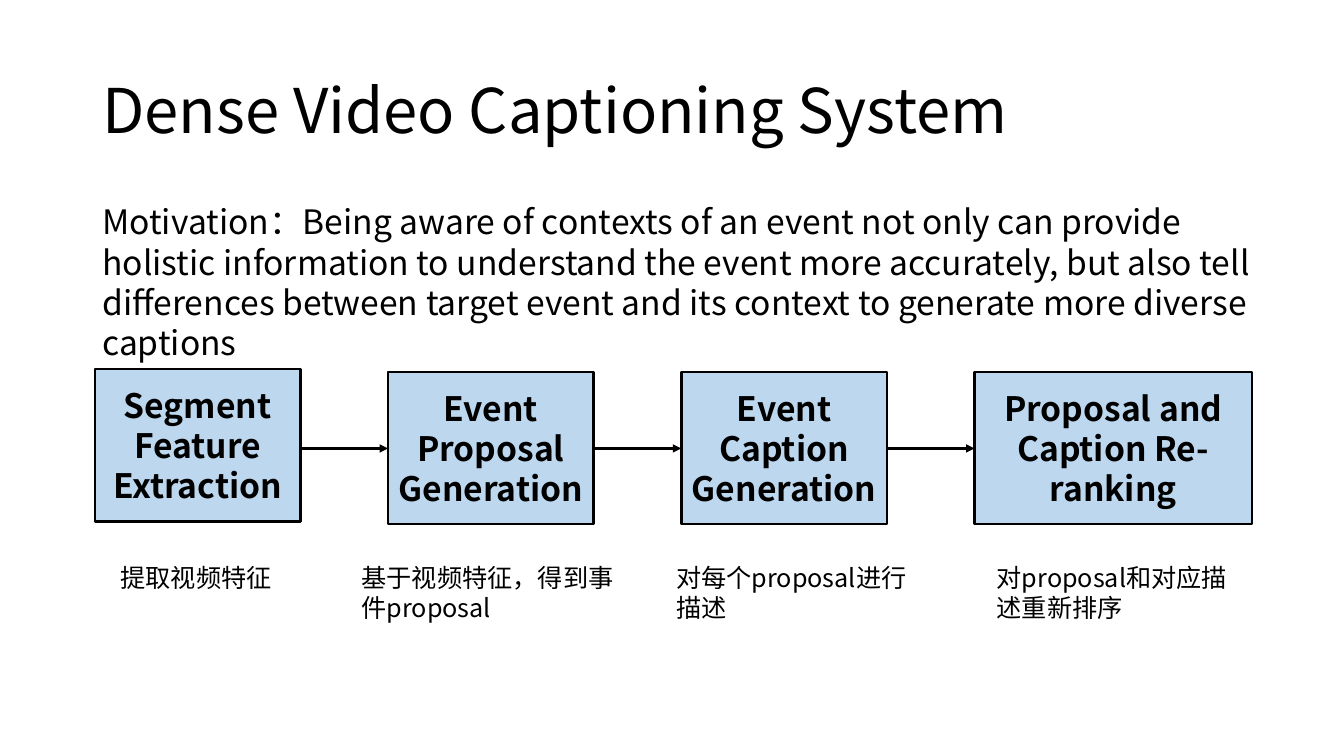
import pptx
import pptx.dml.color
import pptx.enum.shapes
import pptx.enum.text
import pptx.oxml
import pptx.util
from lxml import etree

Cm = pptx.util.Cm
Pt = pptx.util.Pt
ANCHOR = pptx.enum.text.MSO_ANCHOR
ALIGN = pptx.enum.text.PP_ALIGN


def color(value):
    return pptx.dml.color.RGBColor.from_string(value)


def write(shape, text, size=18, bold=False, align=ALIGN.LEFT, anchor=ANCHOR.TOP,
          spacing=None, wrap=True, font="Noto Sans CJK SC", ink="000000"):
    frame = shape.text_frame
    frame.word_wrap = wrap
    frame.vertical_anchor = anchor
    para = frame.paragraphs[0]
    para.alignment = align
    if spacing:
        para.line_spacing = spacing
    span = para.add_run()
    span.text = text
    span.font.name = font
    span.font.size = Pt(size)
    span.font.bold = bold
    span.font.color.rgb = color(ink)
    properties = span.font._element
    east_asian = etree.SubElement(properties, pptx.oxml.ns.qn("a:ea"))
    east_asian.set("typeface", font)


class Style:
    fill = "BDD7EE"
    ink = "000000"

    def __init__(self, page):
        self.page = page

    def label(self, left, top, width, height, text, **format):
        box = self.page.shapes.add_textbox(Cm(left), Cm(top), Cm(width), Cm(height))
        write(box, text, ink=self.ink, **format)

    def stage(self, left, top, width, height, text):
        box = self.page.shapes.add_shape(
            pptx.enum.shapes.MSO_SHAPE.RECTANGLE, Cm(left), Cm(top), Cm(width), Cm(height))
        box.shadow.inherit = False
        box.fill.solid()
        box.fill.fore_color.rgb = color(self.fill)
        box.line.color.rgb = color(self.ink)
        box.line.width = Pt(1.75)
        write(box, text, size=24, bold=True, align=ALIGN.CENTER,
              anchor=ANCHOR.MIDDLE, ink=self.ink)

    def arrow(self, start, end, height):
        line = self.page.shapes.add_connector(
            pptx.enum.shapes.MSO_CONNECTOR.STRAIGHT, Cm(start), Cm(height), Cm(end), Cm(height))
        line.line.color.rgb = color(self.ink)
        line.line.width = Pt(2)
        qn = pptx.oxml.ns.qn
        etree.SubElement(line.line._get_or_add_ln(), qn("a:tailEnd")).set("type", "triangle")
        etree.SubElement(line._element.spPr, qn("a:effectLst"))


def main():
    deck = pptx.Presentation()
    deck.slide_width = Cm(33.87)
    deck.slide_height = Cm(19.05)
    style = Style(deck.slides.add_slide(deck.slide_layouts[6]))

    style.label(2.33, 1.01, 29.21, 3.68, "Dense Video Captioning System",
                size=44, anchor=ANCHOR.MIDDLE, spacing=0.9)
    style.label(2.33, 4.95, 30.23, 3.33,
                "Motivation：Being aware of contexts of an event not only can provide "
                "holistic information to understand the event more accurately, but also "
                "tell differences between target event and its context to generate more "
                "diverse captions", size=24)

    first, step, width = 2.39, 7.39, 5.18
    stages = [
        ("Segment Feature Extraction", 9.3, width),
        ("Event Proposal Generation", 9.37, width),
        ("Event Caption Generation", 9.37, width),
        ("Proposal and Caption Re-ranking", 9.37, 6.99),
    ]
    for index, (name, top, stage_width) in enumerate(stages):
        left = first + index * step
        style.stage(left, top, stage_width, 3.84, name)
        if index:
            style.arrow(left - step + width, left, 11.3)

    captions = [
        ("提取视频特征", 2.79, 4.37, 1.02, False),
        ("基于视频特征，得到事件proposal", 8.86, 6.99, 1.8, True),
        ("对每个proposal进行描述", 16.79, 6.68, 1.8, True),
        ("对proposal和对应描述重新排序", 24.87, 6.68, 1.8, True),
    ]
    for text, left, caption_width, height, wrap in captions:
        style.label(left, 14.05, caption_width, height, text, wrap=wrap)

    deck.save("out.pptx")


if __name__ == "__main__":
    main()
